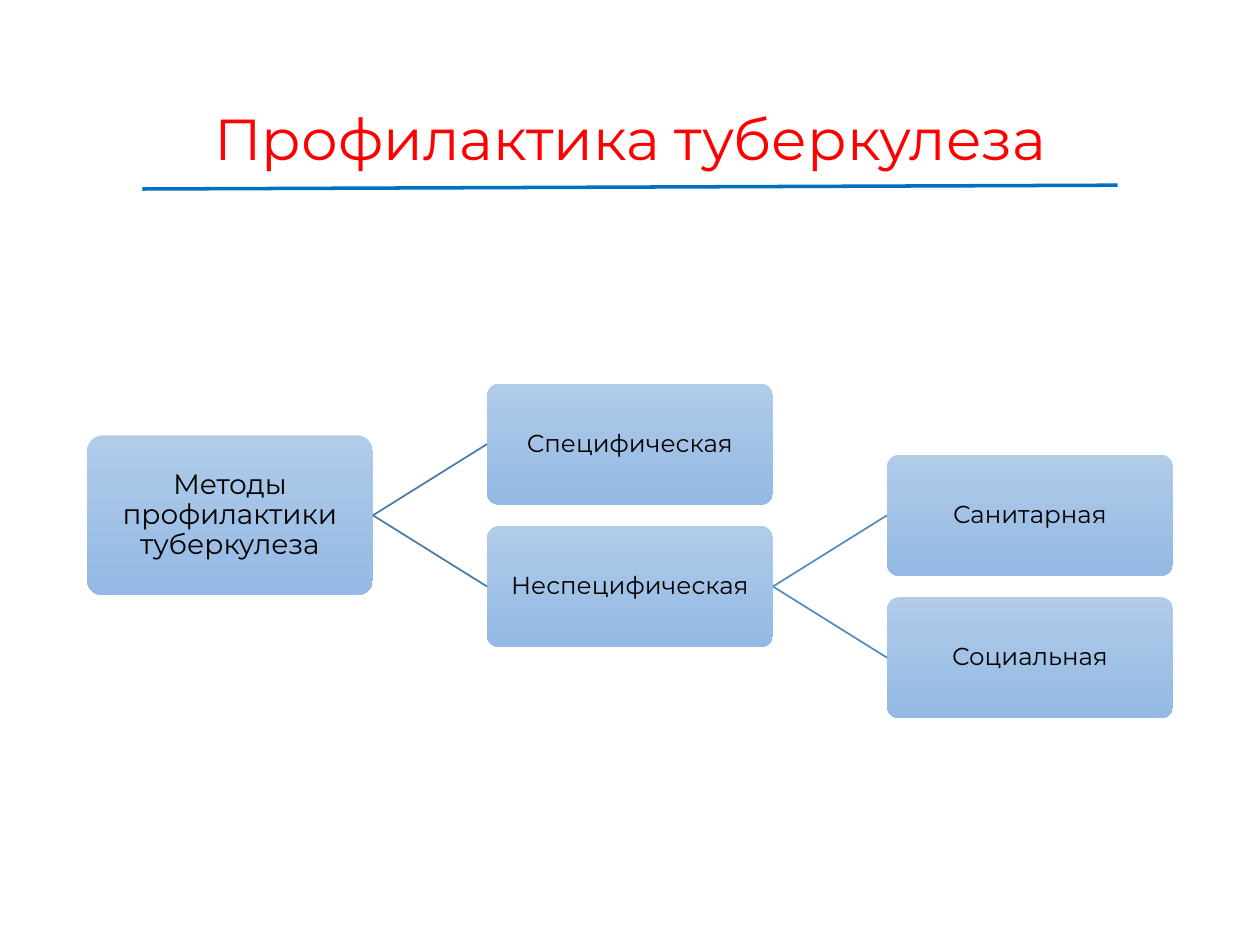
from lxml import etree
from pptx import Presentation, util as u
from pptx.dml.color import RGBColor
from pptx.enum import shapes, text
from pptx.oxml.ns import qn

SLIDE_WIDTH, SLIDE_HEIGHT = 10, 7.5
MARGIN = 0.69
BOX_WIDTH = 2.27
COLUMN_STEP = (SLIDE_WIDTH - 2 * MARGIN - BOX_WIDTH) / 2
ROOT_MIDDLE = 4.09
SIBLING_STEP = 1.13


def color(value):
    return RGBColor.from_string(value)


class TreeSlide:
    """Style and drawing methods for the current slide."""

    font = "Montserrat"
    gradient = ("B1CBE9", "93B9E4")
    text_color = "000000"

    def __init__(self, slide):
        self.slide = slide

    def add_words(self, shape, words, size, font_color):
        frame = shape.text_frame
        frame.word_wrap = True
        frame.vertical_anchor = text.MSO_ANCHOR.MIDDLE
        paragraph = frame.paragraphs[0]
        paragraph.alignment = text.PP_ALIGN.CENTER
        paragraph.line_spacing = 0.9
        run = paragraph.add_run()
        run.text = words
        run.font.name = self.font
        run.font.size = u.Pt(size)
        run.font.color.rgb = color(font_color)

    def title(self, words, left, top, width, height):
        shape = self.slide.shapes.add_textbox(
            *map(u.Inches, (left, top, width, height)))
        self.add_words(shape, words, 33, "FF0000")

    def box(self, words, column, middle, height=0.96, size=14):
        left = MARGIN + column * COLUMN_STEP
        shape = self.slide.shapes.add_shape(
            shapes.MSO_SHAPE.ROUNDED_RECTANGLE,
            *map(u.Inches, (left, middle - height / 2, BOX_WIDTH, height)))
        shape.adjustments[0] = 0.1
        shape.shadow.inherit = False
        shape.line.fill.background()
        shape.fill.gradient()
        shape.fill.gradient_angle = 270
        for stop, value in zip(shape.fill.gradient_stops, self.gradient):
            stop.color.rgb = color(value)
        frame = shape.text_frame
        frame.margin_left = frame.margin_right = u.Inches(0.04)
        frame.margin_top = frame.margin_bottom = u.Inches(0.04)
        self.add_words(shape, words, size, self.text_color)
        return shape

    def line(self, start, end, line_color, width):
        connector = self.slide.shapes.add_connector(
            shapes.MSO_CONNECTOR.STRAIGHT, *map(u.Inches, start + end))
        connector.line.color.rgb = color(line_color)
        connector.line.width = u.Pt(width)
        properties = connector._element.spPr
        etree.SubElement(properties, qn("a:effectLst"))
        return connector

    def branch(self, parent, child, line_color):
        connector = self.line((0, 0), (1, 1), line_color, 1)
        connector.begin_connect(parent, 3)
        connector.end_connect(child, 1)


def main():
    presentation = Presentation()
    presentation.slide_width = u.Inches(SLIDE_WIDTH)
    presentation.slide_height = u.Inches(SLIDE_HEIGHT)
    tree = TreeSlide(presentation.slides.add_slide(presentation.slide_layouts[6]))

    # Title with underline
    tree.title("Профилактика туберкулеза", MARGIN, 0.4, SLIDE_WIDTH - 2 * MARGIN, 1.45)
    tree.line((1.13, 1.5), (8.87, 1.47), "0070C0", 2)

    # Tree: each level's pair is centred on its parent
    parent = tree.box("Методы профилактики туберкулеза", 0, ROOT_MIDDLE, 1.27, 16)
    middle = ROOT_MIDDLE
    levels = [
        ("497CAB", ("Специфическая", "Неспецифическая")),
        ("538DC1", ("Санитарная", "Социальная")),
    ]
    for column, (line_color, names) in enumerate(levels, start=1):
        upper, lower = middle - SIBLING_STEP / 2, middle + SIBLING_STEP / 2
        children = [tree.box(name, column, y) for name, y in zip(names, (upper, lower))]
        for child in children:
            tree.branch(parent, child, line_color)
        # The lower box carries the next level
        parent, middle = children[-1], lower

    presentation.save("out.pptx")


if __name__ == "__main__":
    main()
